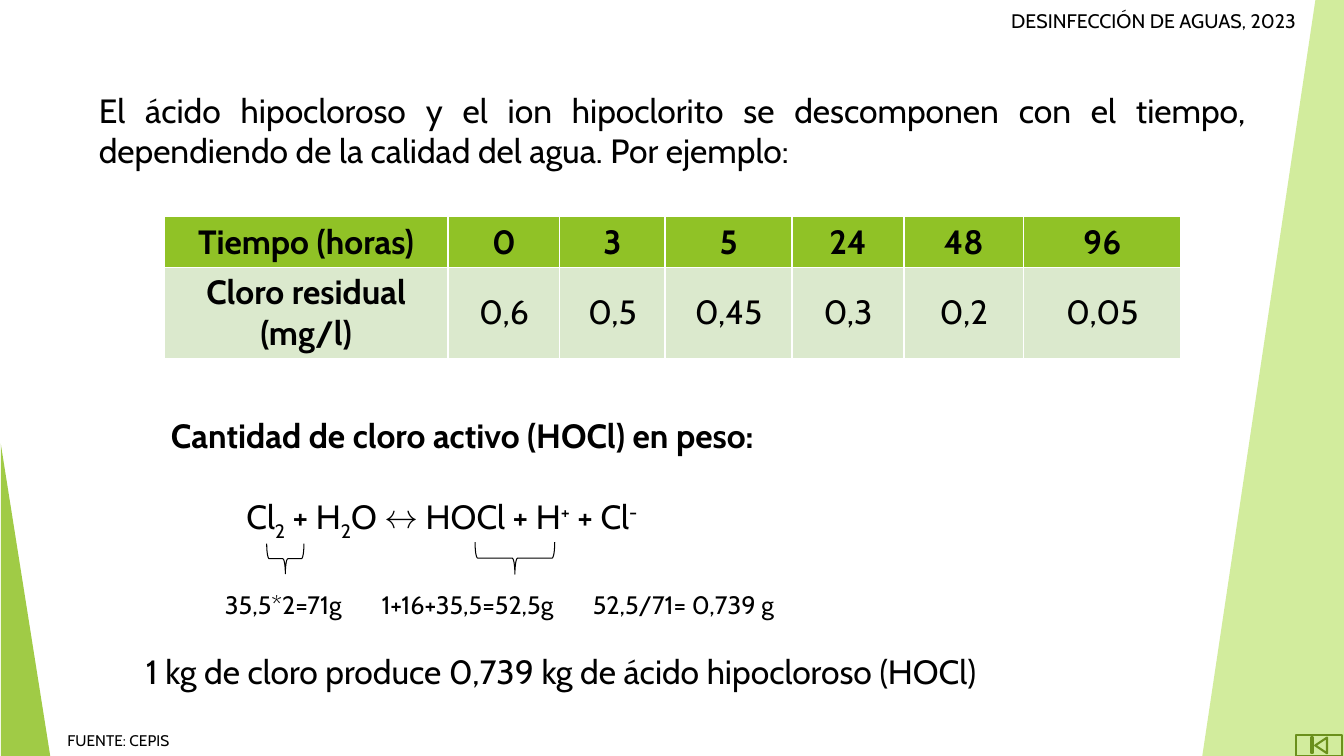
"""Builds the slide on how residual chlorine decays and how much active chlorine is produced."""
from pptx import Presentation
from pptx.dml.color import RGBColor
from pptx.enum.shapes import MSO_SHAPE
from pptx.enum.text import MSO_ANCHOR, PP_ALIGN
from pptx.oxml.ns import qn
from pptx.util import Cm, Pt
from lxml import etree

BLACK = RGBColor(0x00, 0x00, 0x00)
GREEN = RGBColor(0x90, 0xC2, 0x26)
LIGHT_GREEN = RGBColor(0xC0, 0xE4, 0x74)
DARK_GREEN = RGBColor(0x6B, 0x90, 0x1C)
PALE_GREEN = RGBColor(0xDB, 0xE9, 0xCD)
CENTER, JUSTIFY, LEFT = PP_ALIGN.CENTER, PP_ALIGN.JUSTIFY, PP_ALIGN.LEFT
MIDDLE = MSO_ANCHOR.MIDDLE
TRIANGLE = MSO_SHAPE.ISOSCELES_TRIANGLE
BRACE = MSO_SHAPE.RIGHT_BRACE
BEGINNING_BUTTON = MSO_SHAPE.ACTION_BUTTON_BEGINNING
FONT = "Cabin"

presentation = Presentation()
presentation.slide_width, presentation.slide_height = Cm(33.87), Cm(19.05)
slide = presentation.slides.add_slide(presentation.slide_layouts[6])
shapes = slide.shapes


def write(paragraph, text, size=24, bold=False, align=LEFT, baseline=0):
    paragraph.alignment = align
    run = paragraph.add_run()
    run.text = text
    run.font.name, run.font.size, run.font.bold = FONT, Pt(size), bold
    run.font.color.rgb = BLACK
    if baseline:
        run.font._element.set("baseline", str(baseline * 1000))


def add_frame(left, top, width, height):
    frame = shapes.add_textbox(Cm(left), Cm(top), Cm(width), Cm(height)).text_frame
    frame.word_wrap = True
    return frame


outline = shapes.build_freeform(Cm(33.15), 0, scale=1.0)
outline.add_line_segments(
    [(Cm(33.87), 0), (Cm(33.87), Cm(19.05)), (Cm(30.3), Cm(19.05))], close=True)
right_band = outline.convert_to_shape()
left_wedge = shapes.add_shape(TRIANGLE, Cm(0.02), Cm(11.18), Cm(1.25), Cm(7.89))
left_wedge.adjustments[0] = 0
for band, color, opacity in [(right_band, LIGHT_GREEN, 70), (left_wedge, GREEN, 85)]:
    band.shadow.inherit = False
    band.fill.solid()
    band.fill.fore_color.rgb = color
    band.line.fill.background()
    fill_color = band.fill._xPr.find(qn("a:solidFill"))[0]
    etree.SubElement(fill_color, qn("a:alpha")).set("val", str(opacity * 1000))

outlined = [
    (BEGINNING_BUTTON, 32.66, 18.52, 1.17, 0.53, 0, DARK_GREEN, 1.5),
    (BRACE, 6.81, 13.61, 0.76, 0.94, 90, BLACK, 0.75),
    (BRACE, 12.57, 13.06, 0.81, 2.01, 90, BLACK, 0.75),
]
for preset, left, top, width, height, angle, color, weight in outlined:
    mark = shapes.add_shape(preset, Cm(left), Cm(top), Cm(width), Cm(height))
    mark.shadow.inherit = False
    mark.rotation = angle
    mark.fill.background()
    mark.line.color.rgb = color
    mark.line.width = Pt(weight)

course = add_frame(24.82, 0.1, 8.51, 0.86)
write(course.paragraphs[0], "DESINFECCIÓN DE AGUAS, 2023", size=14, align=CENTER)

intro = add_frame(2.24, 2.13, 29.41, 2.31)
write(intro.paragraphs[0],
      "El ácido hipocloroso y el ion hipoclorito se descomponen con el tiempo, "
      "dependiendo de la calidad del agua. Por ejemplo:", align=JUSTIFY)

decay = [
    ["Tiempo (horas)", "0", "3", "5", "24", "48", "96"],
    ["Cloro residual (mg/l)", "0,6", "0,5", "0,45", "0,3", "0,2", "0,05"],
]
column_widths = [7.15, 2.82, 2.65, 3.2, 2.82, 3.02, 3.96]
row_heights = [1.25, 2.3]
table = shapes.add_table(len(decay), len(column_widths), Cm(4.14), Cm(5.46),
                         Cm(sum(column_widths)), Cm(sum(row_heights))).table
table.horz_banding = False
for column, width in zip(table.columns, column_widths):
    column.width = Cm(width)
for r, values in enumerate(decay):
    table.rows[r].height = Cm(row_heights[r])
    for c, value in enumerate(values):
        cell = table.cell(r, c)
        cell.vertical_anchor = MIDDLE
        cell.fill.solid()
        cell.fill.fore_color.rgb = PALE_GREEN if r else GREEN
        write(cell.text_frame.paragraphs[0], value, bold=r == 0 or c == 0, align=CENTER)

source = add_frame(1.45, 18.29, 6.81, 0.74)
write(source.paragraphs[0], "FUENTE: CEPIS", size=11)

reaction = add_frame(4.06, 10.34, 18.52, 3.33)
write(reaction.paragraphs[0], "Cantidad de cloro activo (HOCl) en peso:", bold=True)
equation = reaction.add_paragraph()
equation.space_before = Pt(29)
equation._p.get_or_add_pPr().set("marL", str(Cm(1.9)))
for part, baseline in [("Cl", 0), ("2", -25), (" + H", 0), ("2", -25), ("O ↔ HOCl + H", 0),
                       ("+", 30), (" + Cl", 0), ("-", 30)]:
    write(equation, part, baseline=baseline)

weights = add_frame(3.43, 14.73, 25.6, 2.82)
sums = weights.paragraphs[0]
write(sums, "\t35,5*2=71g\t1+16+35,5=52,5g\t52,5/71= 0,739 g", size=18)
tab_stops = etree.SubElement(sums._p.get_or_add_pPr(), qn("a:tabLst"))
for position in [1.99, 5.94, 11.26]:
    etree.SubElement(tab_stops, qn("a:tab"), pos=str(Cm(position)), algn="l")
conclusion = weights.add_paragraph()
conclusion.space_before = Pt(22)
write(conclusion, "1 kg de cloro produce 0,739 kg de ácido hipocloroso (HOCl)")

presentation.save("out.pptx")
